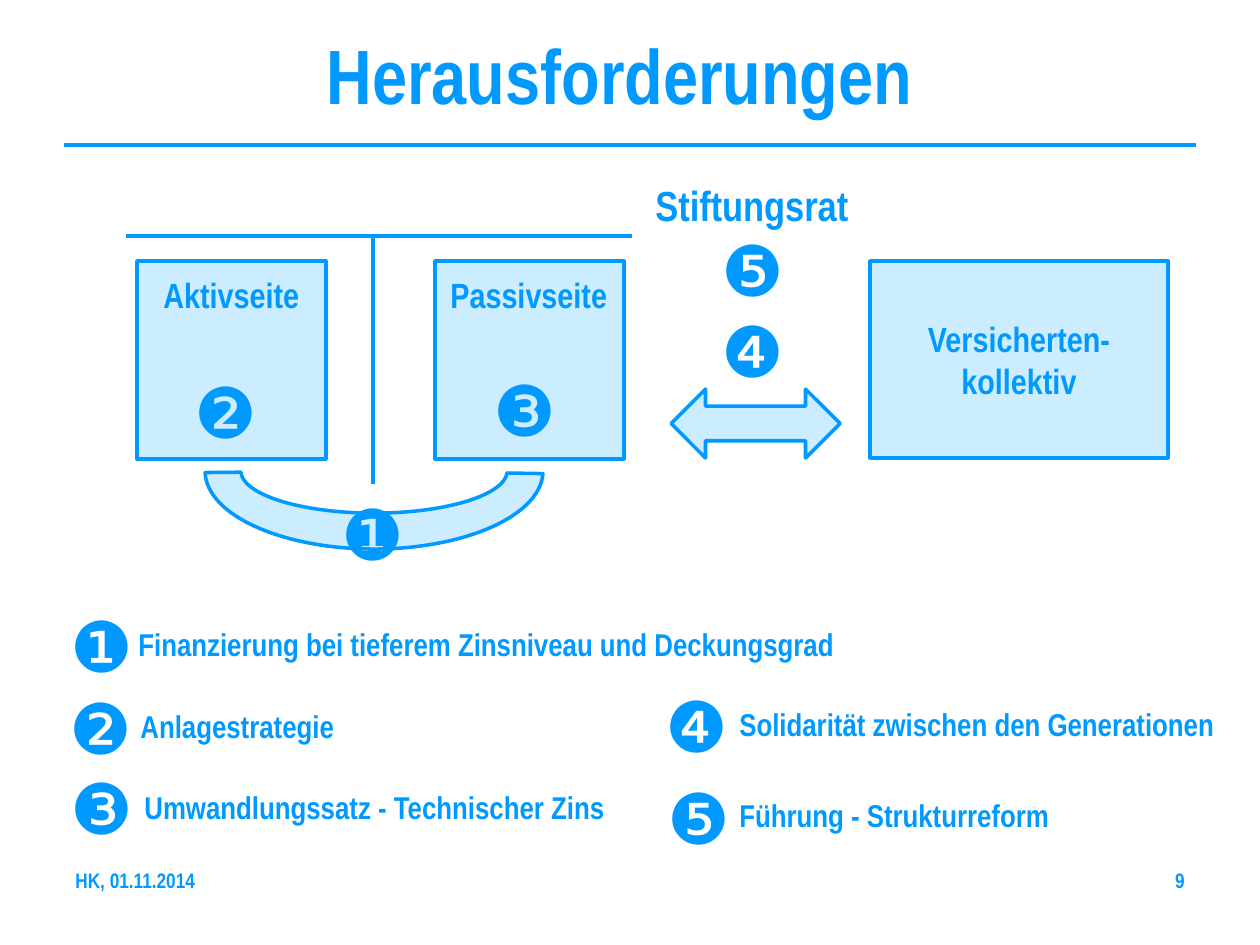
from lxml.etree import SubElement
from pptx import Presentation
from pptx.dml.color import RGBColor
from pptx.enum.shapes import MSO_CONNECTOR, MSO_SHAPE
from pptx.enum.text import MSO_ANCHOR as ANCHOR, PP_ALIGN as ALIGN
from pptx.oxml.ns import qn
from pptx.util import Pt

PX = 914400 / 126
COLORS = {"blue": RGBColor.from_string("0099FF"), "pale": RGBColor.from_string("CCECFF")}
NARROW = {"name": "Arial Narrow", "bold": True}
DIGIT = {"name": "Arial", "bold": False, "size": Pt(40)}


def px(*values):
    return [round(v * PX) for v in values]


def write(s, text, fmt, align=ALIGN.LEFT, anchor=ANCHOR.TOP, wrap=False):
    """Fill a shape with one paragraph per line of text."""
    tf = s.text_frame
    tf.word_wrap = wrap
    tf.vertical_anchor = anchor
    tf.text = text
    for p in tf.paragraphs:
        p.alignment = align
        for r in p.runs:
            r.font.color.rgb = COLORS["blue"]
            for key, value in fmt.items():
                setattr(r.font, key, value)


prs = Presentation()
prs.slide_width, prs.slide_height = px(1260, 945)
slide = prs.slides.add_slide(prs.slide_layouts[5])
shapes = slide.shapes

# Title
title = shapes.title
title.left, title.top, title.width, title.height = px(314, 21, 757, 106)
write(title, "Herausforderungen", {**NARROW, "size": Pt(44)}, wrap=True)

# Balance sheet, insured group, double arrow and financing arc
blocks = {}
for name, kind, box in [
    ("assets", MSO_SHAPE.RECTANGLE, (137, 261, 189, 198)),
    ("liabilities", MSO_SHAPE.RECTANGLE, (435, 261, 189, 198)),
    ("insured", MSO_SHAPE.RECTANGLE, (870, 261, 298, 197)),
    ("exchange", MSO_SHAPE.LEFT_RIGHT_ARROW, (671, 389, 169, 69)),
    ("financing", MSO_SHAPE.BLOCK_ARC, (205, 393, 338, 156)),
]:
    s = blocks[name] = shapes.add_shape(kind, *px(*box))
    s.shadow.inherit = False
    s.fill.solid()
    s.fill.fore_color.rgb = COLORS["pale"]
    s.line.color.rgb = COLORS["blue"]
    s.line.width = Pt(2)

write(blocks["insured"], "Versicherten-\nkollektiv", {**NARROW, "size": Pt(20)},
      ALIGN.CENTER, ANCHOR.MIDDLE, True)
arc = blocks["financing"]
arc.rotation = 180
for i, value in enumerate((108.52, 215.69, 0.23)):
    arc.adjustments[i] = value

# Title rule and the T of the balance sheet
for ends, width in [
    ((64, 145, 1196, 145), 2),
    ((126, 236, 632, 236), 2.25),
    ((373, 236, 373, 484), 2.25),
]:
    line = shapes.add_connector(MSO_CONNECTOR.STRAIGHT, *px(*ends))
    line.line.color.rgb = COLORS["blue"]
    line.line.width = Pt(width)
    SubElement(line._element.spPr, qn("a:effectLst"))

# Numbers in the diagram and in the legend
for digit, x, y in [
    ("❶", 329, 484), ("❷", 182, 362), ("❸", 481, 360), ("❹", 709, 301), ("❺", 709, 220),
    ("❶", 58, 596), ("❷", 57, 678), ("❸", 58, 758), ("❹", 653, 676), ("❺", 655, 768),
]:
    write(shapes.add_textbox(*px(x, y, 88, 97)), digit, DIGIT)

# Diagram labels, legend and footer
for text, size, box in [
    ("Stiftungsrat", 24, (643, 173, 220, 63)),
    ("Aktivseite", 20, (151, 267, 162, 55)),
    ("Passivseite", 20, (438, 267, 184, 55)),
    ("Finanzierung bei tieferem Zinsniveau und Deckungsgrad", 18, (126, 619, 729, 50)),
    ("Anlagestrategie", 18, (128, 701, 222, 50)),
    ("Umwandlungssatz - Technischer Zins", 18, (132, 782, 508, 50)),
    ("Solidarität zwischen den Generationen", 18, (727, 699, 505, 50)),
    ("Führung - Strukturreform", 18, (727, 790, 338, 50)),
]:
    write(shapes.add_textbox(*px(*box)), text, {**NARROW, "size": Pt(size)})

for text, x, align in [("HK, 01.11.2014", 63, ALIGN.LEFT), ("9", 903, ALIGN.RIGHT)]:
    write(shapes.add_textbox(*px(x, 861, 294, 66)), text, {**NARROW, "size": Pt(12)},
          align, wrap=True)

prs.save("out.pptx")
